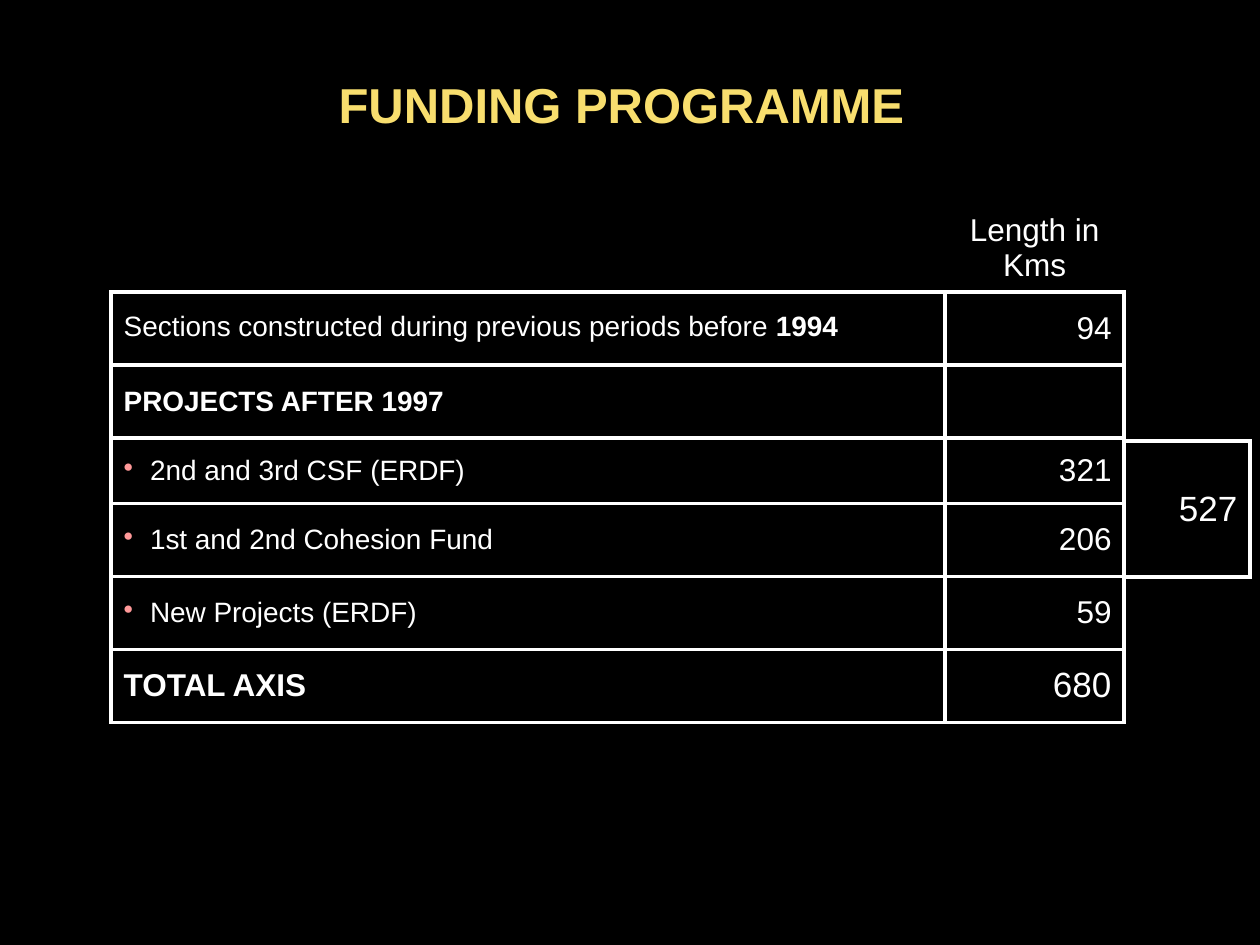
from lxml.etree import SubElement
from pptx import Presentation
from pptx.dml.color import RGBColor
from pptx.enum.text import MSO_ANCHOR, MSO_AUTO_SIZE, PP_ALIGN
from pptx.oxml.ns import qn
from pptx.util import Cm, Pt

WHITE, BLACK, GOLD, PINK = "FFFFFF", "000000", "F8DE6E", "FF9999"
INDENT = Cm(0.53)
EDGES = ("L", "R", "T", "B")


def colour(value):
    """Turn a hex string into a colour."""
    return RGBColor.from_string(value)


def write(paragraph, text, size=16, bold=False, hue=WHITE, align=PP_ALIGN.LEFT, gap=0.2):
    """Add a run of formatted text, with space before in proportion to its size."""
    paragraph.alignment = align
    paragraph.space_before = Pt(size * gap)
    run = paragraph.add_run()
    run.text = text
    run.font.name = "Arial"
    run.font.size = Pt(size)
    run.font.bold = bold
    run.font.color.rgb = colour(hue)


def add_hex(parent, hue):
    """Append a hex colour to an XML element."""
    SubElement(parent, qn("a:srgbClr"), val=hue)


def hang(paragraph, bullet):
    """Give a paragraph a hanging indent, with or without a bullet."""
    properties = paragraph._p.get_or_add_pPr()
    properties.set("marL", str(INDENT))
    properties.set("indent", str(-INDENT))
    if bullet:
        add_hex(SubElement(properties, qn("a:buClr")), PINK)
        SubElement(properties, qn("a:buChar"), char="•")


def frame(cell, visible=EDGES):
    """Draw the visible edges of a clear cell and hide the others."""
    properties = cell._tc.get_or_add_tcPr()
    for edge in EDGES:
        line = SubElement(properties, qn(f"a:ln{edge}"), w=str(Pt(2.25)))
        if edge in visible:
            add_hex(SubElement(line, qn("a:solidFill")), WHITE)
        else:
            SubElement(line, qn("a:noFill"))
    cell.fill.background()
    cell.vertical_anchor = MSO_ANCHOR.MIDDLE


def add_grid(slide, left, top, widths, heights):
    """Add a plain table with the given column widths and row heights in cm."""
    grid = slide.shapes.add_table(
        len(heights), len(widths), Cm(left), Cm(top), Cm(sum(widths)), Cm(sum(heights))
    ).table
    grid.first_row = grid.horz_banding = False
    for column, width in zip(grid.columns, widths):
        column.width = Cm(width)
    for row, height in zip(grid.rows, heights):
        row.height = Cm(height)
    return grid


def add_title(slide, text):
    """Place and fill the title."""
    title = slide.shapes.title
    title.left, title.top, title.width, title.height = Cm(3.56), Cm(1.37), Cm(17.93), Cm(1.45)
    title.text_frame.word_wrap = True
    title.text_frame.auto_size = MSO_AUTO_SIZE.SHAPE_TO_FIT_TEXT
    title.text_frame.vertical_anchor = MSO_ANCHOR.TOP
    write(title.text_frame.paragraphs[0], text, size=28, bold=True, hue=GOLD,
          align=PP_ALIGN.CENTER, gap=0.5)


def add_lengths(slide):
    """Add the table of road lengths by funding source."""
    funding = [
        ("PROJECTS AFTER 1997", ""),
        ("2nd and 3rd CSF (ERDF)", "321"),
        ("1st and 2nd Cohesion Fund", "206"),
        ("New Projects (ERDF)", "59"),
        ("TOTAL AXIS", "680"),
    ]
    grid = add_grid(slide, 2.24, 4.11, [16.81, 3.61], [1.27, 1.47, 1.47, 1.32, 1.47, 1.47, 1.47])
    for index, row in enumerate(grid.rows):
        for cell in row.cells:
            frame(cell, EDGES if index else ("B",))

    def paragraph(row, column):
        return grid.cell(row, column).text_frame.paragraphs[0]

    write(paragraph(0, 1), "Length in Kms", size=18, align=PP_ALIGN.CENTER)
    earlier = paragraph(1, 0)
    earlier.line_spacing = 0.9
    write(earlier, "Sections constructed during previous periods before ")
    write(earlier, "1994", bold=True)
    write(paragraph(1, 1), "94", size=18, align=PP_ALIGN.RIGHT)

    for index, (source, length) in enumerate(funding, start=2):
        total = source == "TOTAL AXIS"
        heading = total or not length
        label = paragraph(index, 0)
        write(label, source, size=18 if total else 16, bold=heading)
        hang(label, bullet=not heading)
        if length:
            write(paragraph(index, 1), length, size=20 if total else 18, align=PP_ALIGN.RIGHT)


def add_subtotal(slide, text):
    """Add the boxed subtotal beside the table."""
    subtotal = add_grid(slide, 22.66, 8.89, [2.54], [2.74]).cell(0, 0)
    frame(subtotal)
    write(subtotal.text_frame.paragraphs[0], text, size=20, align=PP_ALIGN.RIGHT)


def main():
    """Build and save the slide."""
    deck = Presentation()
    deck.slide_width, deck.slide_height = Cm(25.4), Cm(19.05)
    slide = deck.slides.add_slide(deck.slide_layouts[5])
    slide.background.fill.solid()
    slide.background.fill.fore_color.rgb = colour(BLACK)
    add_lengths(slide)
    add_title(slide, "FUNDING PROGRAMME")
    add_subtotal(slide, "527")
    deck.save("out.pptx")


if __name__ == "__main__":
    main()
